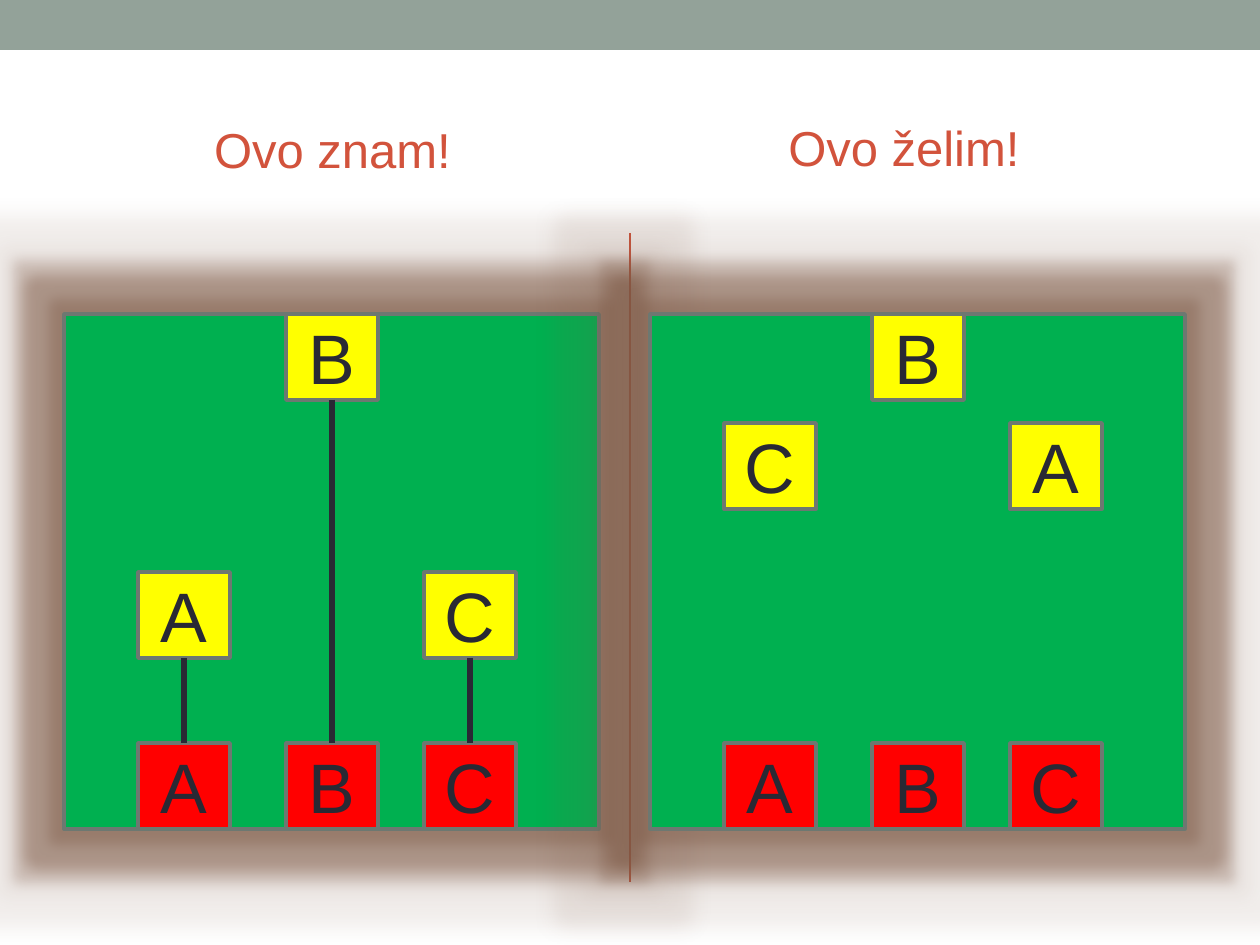
from dataclasses import dataclass

from lxml import etree
from pptx import Presentation
from pptx import util as u
from pptx.dml.color import RGBColor
from pptx.enum import shapes, text
from pptx.oxml.ns import qn

PX = 914400 / 126  # EMU in one px

SAGE = RGBColor(0x93, 0xA2, 0x99)
RUST = RGBColor(0xD2, 0x53, 0x3C)
GREEN = RGBColor(0x00, 0xB0, 0x50)
RED = RGBColor(0xFF, 0x00, 0x00)
YELLOW = RGBColor(0xFF, 0xFF, 0x00)
GREY = RGBColor(0x6D, 0x78, 0x71)
INK = RGBColor(0x29, 0x29, 0x34)
HALO = RGBColor(0x7D, 0x58, 0x44)

FONT = "Arial"
BOARD_TOP, BOARD_WIDTH, BOARD_HEIGHT = 314, 535, 515
BLOCK_WIDTH, BLOCK_HEIGHT = 92, 86
COLUMNS = (74, 222, 360)  # block offsets from the board's left edge
BOTTOM_ROW = BOARD_TOP + BOARD_HEIGHT - BLOCK_HEIGHT


@dataclass(frozen=True)
class Heading:
    wording: str
    left: int
    top: int
    width: int
    height: int


@dataclass(frozen=True)
class Board:
    left: int
    upper_letters: str
    upper_tops: tuple[int, int, int]
    linked: bool


HEADINGS = (
    Heading("Ovo znam!", 54, 66, 557, 165),
    Heading("Ovo želim!", 649, 96, 510, 102),
)
BOARDS = (
    Board(64, "ABC", (572, BOARD_TOP, 572), True),
    Board(650, "CBA", (423, BOARD_TOP, 423), False),
)


def px(length: int) -> u.Emu:
    return u.Emu(round(length * PX))


def add_box(parent, left: int, top: int, width: int, height: int,
            fill: RGBColor, outlined: bool = True):
    box = parent.add_shape(shapes.MSO_SHAPE.RECTANGLE,
                           px(left), px(top), px(width), px(height))
    box.shadow.inherit = False
    box.fill.solid()
    box.fill.fore_color.rgb = fill
    if outlined:
        box.line.color.rgb = GREY
        box.line.width = u.Pt(2.08)
    else:
        box.line.fill.background()
    return box


def add_line(parent, x: int, top: int, bottom: int, color: RGBColor, width: float) -> None:
    line = parent.add_connector(shapes.MSO_CONNECTOR.STRAIGHT,
                                px(x), px(top), px(x), px(bottom))
    line.line.color.rgb = color
    line.line.width = u.Pt(width)
    etree.SubElement(line._element.spPr, qn("a:effectLst"))


def add_halo(box) -> None:
    """Surround a box with a glow and an enlarged, blurred shadow."""
    effects = box._element.spPr.find(qn("a:effectLst"))
    glow = etree.SubElement(effects, qn("a:glow"), rad=str(px(26)))
    shadow = etree.SubElement(effects, qn("a:outerShdw"), blurRad=str(px(12)),
                              sx="118000", sy="120000", algn="ctr", rotWithShape="0")
    for effect in (glow, shadow):
        color = etree.SubElement(effect, qn("a:srgbClr"), val=str(HALO))
        etree.SubElement(color, qn("a:alpha"), val="40000")


def add_block(parent, letter: str, left: int, top: int, fill: RGBColor) -> None:
    block = add_box(parent, left, top, BLOCK_WIDTH, BLOCK_HEIGHT, fill)
    frame = block.text_frame
    frame.word_wrap = False
    frame.vertical_anchor = text.MSO_ANCHOR.MIDDLE
    paragraph = frame.paragraphs[0]
    paragraph.text = letter
    paragraph.alignment = text.PP_ALIGN.CENTER
    paragraph.font.name = FONT
    paragraph.font.size = u.Pt(40)
    paragraph.font.color.rgb = INK


def add_board(slide, board: Board) -> None:
    group = slide.shapes.add_group_shape().shapes
    add_halo(add_box(group, board.left, BOARD_TOP, BOARD_WIDTH, BOARD_HEIGHT, GREEN))
    for lower, upper, top, offset in zip("ABC", board.upper_letters,
                                         board.upper_tops, COLUMNS):
        left = board.left + offset
        add_block(group, lower, left, BOTTOM_ROW, RED)
        add_block(group, upper, left, top, YELLOW)
        if board.linked:
            add_line(group, left + BLOCK_WIDTH // 2, top + BLOCK_HEIGHT,
                     BOTTOM_ROW, INK, 3)


def fill_heading(placeholder, heading: Heading) -> None:
    placeholder.left, placeholder.top = px(heading.left), px(heading.top)
    placeholder.width, placeholder.height = px(heading.width), px(heading.height)
    frame = placeholder.text_frame
    frame.vertical_anchor = text.MSO_ANCHOR.MIDDLE
    paragraph = frame.paragraphs[0]
    paragraph.text = heading.wording
    paragraph.alignment = text.PP_ALIGN.CENTER
    paragraph.font.name = FONT
    paragraph.font.size = u.Pt(28)
    paragraph.font.bold = False
    paragraph.font.color.rgb = RUST


def main() -> None:
    presentation = Presentation()
    presentation.slide_width, presentation.slide_height = px(1260), px(945)
    slide = presentation.slides.add_slide(presentation.slide_layouts.get_by_name("Comparison"))

    # Headings in the two body placeholders; the others are not needed
    bodies = []
    for placeholder in list(slide.placeholders):
        if placeholder.placeholder_format.type == shapes.PP_PLACEHOLDER.BODY:
            bodies.append(placeholder)
        else:
            placeholder._element.getparent().remove(placeholder._element)
    for placeholder, heading in zip(bodies, HEADINGS):
        fill_heading(placeholder, heading)

    # Top band and centre divider
    add_box(slide.shapes, 0, 0, 1260, 50, SAGE, outlined=False)
    add_line(slide.shapes, 630, 233, 882, RUST, 1.5)

    # Known and wanted arrangements
    for board in BOARDS:
        add_board(slide, board)

    presentation.save("out.pptx")


if __name__ == "__main__":
    main()
